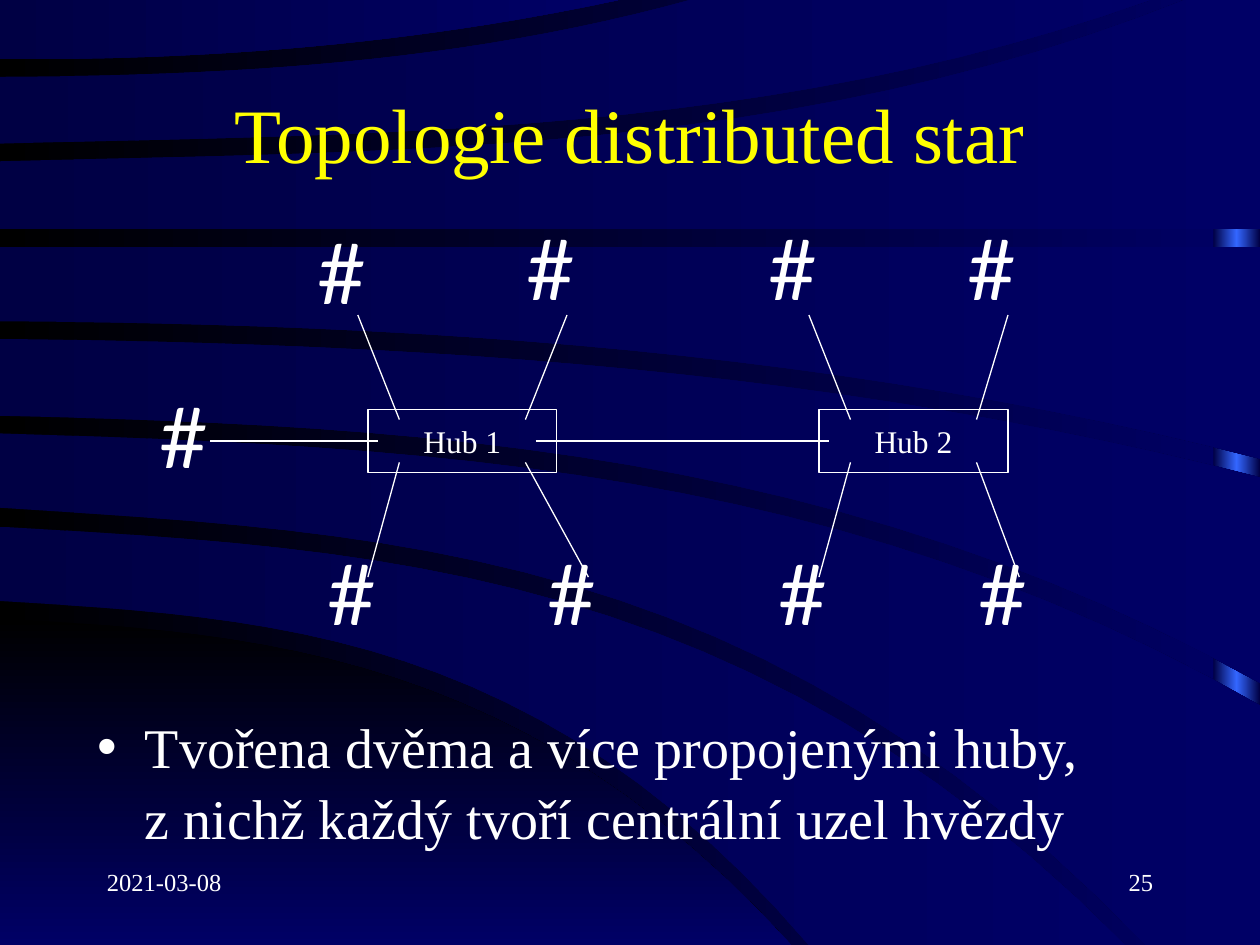
from copy import deepcopy
from math import prod

from lxml import etree
from pptx import Presentation
from pptx import util as u
from pptx.dml.color import RGBColor
from pptx.enum import shapes, text
from pptx.oxml import ns

COLOURS = {"white": "FFFFFF", "title": "FFFF00", "black": "000000",
           "night": "000044", "navy": "000066", "glow": "3366FF"}
SERIF, SANS = "Times New Roman", "Lato"
SLIDE_WIDTH, SLIDE_HEIGHT = 10, 7.5

# An edge is its right end and its heights at equal steps from the left side, in inches.
WEDGE = (6.28, [4.91, 5.12, 5.83, 7.5])
# Upper edge, lower edge and the corners of the slide between their right ends.
BANDS = [
    ((8.93, [4.18, 4.45, 5.34, 7.5]), (6.42, [4.77, 4.98, 5.71, 7.5]), []),
    ((10, [3.44, 3.62, 4.21, 5.6]), (9.09, [4.03, 4.31, 5.23, 7.5]),
     [(SLIDE_WIDTH, SLIDE_HEIGHT)]),
    ((10, [2.69, 2.8, 3.13, 3.79]), (10, [3.3, 3.47, 4.06, 5.42]), []),
    ((10, [1.96, 1.96]), (10, [2.55, 2.65, 2.98, 3.64]), []),
    ((9.4, [1.28, 1.19, 0.87, 0]), (10, [1.82, 1.82]), [(SLIDE_WIDTH, 0)]),
    ((5.48, [0.61, 0.56, 0.38, 0]), (9.13, [1.14, 1.05, 0.76, 0]), []),
    ((4.91, [0, 0]), (4.91, [0.47, 0.43, 0.28, 0]), []),
]
EDGE_STEPS = 24

# Each hub: label, left edge, and the left and top of its computers.
HUBS = [
    ("Hub 1", 2.92, [(2.42, 1.7), (4.08, 1.67), (2.5, 4.25), (4.25, 4.25)]),
    ("Hub 2", 6.5, [(6, 1.67), (7.58, 1.67), (6.08, 4.25), (7.67, 4.25)]),
]
HUB_TOP, HUB_WIDTH, HUB_HEIGHT = 3.25, 1.5, 0.5
CABLE_Y = HUB_TOP + HUB_HEIGHT / 2
CABLE_SHIFT = 0.42
# Cable start from the hub's left edge, and the heights of both cable ends.
PORTS = [(x, *ends) for ends in [(3.33, 2.5), (3.67, 4.58)] for x in (0.25, 1.25)]


def inch(value):
    return u.Cm(value * 2.54)


def rgb(name):
    return RGBColor.from_string(COLOURS[name])


def place(shape, left, top, width, height):
    shape.left, shape.top = inch(left), inch(top)
    shape.width, shape.height = inch(width), inch(height)


def set_gradient(fill, names, angle=0):
    """Spread the named colours evenly; the angle runs counter-clockwise."""
    fill.gradient()
    fill.gradient_angle = angle
    stop_list = fill.gradient_stops[0]._gs.getparent()
    while len(stop_list) < len(names):
        stop_list.append(deepcopy(stop_list[0]))
    for i, (stop, name) in enumerate(zip(fill.gradient_stops, names)):
        stop.color.rgb = rgb(name)
        stop.position = i / (len(names) - 1)


def style(paragraph, size, font=SERIF, colour="white", align=text.PP_ALIGN.LEFT):
    paragraph.alignment = align
    paragraph.font.size = u.Pt(size)
    paragraph.font.name = font
    paragraph.font.color.rgb = rgb(colour)


def trace(edge):
    """Sample the polynomial that passes through the heights of an edge."""
    right, heights = edge
    last = len(heights) - 1
    points = []
    for step in range(EDGE_STEPS + 1):
        t = step / EDGE_STEPS
        y = sum(height * prod((t * last - j) / (i - j) for j in range(last + 1) if j != i)
                for i, height in enumerate(heights))
        points.append((t * right, y))
    return points


def add_arc(slide, outline, names, angle=0):
    points = [(inch(x), inch(y)) for x, y in outline]
    builder = slide.shapes.build_freeform(*points[0])
    builder.add_line_segments(points[1:], close=True)
    arc = builder.convert_to_shape()
    arc.shadow.inherit = False
    arc.line.fill.background()
    set_gradient(arc.fill, names, angle)


def add_background(slide):
    set_gradient(slide.background.fill, ["black", "navy"])
    strip = slide.shapes.add_shape(shapes.MSO_SHAPE.RECTANGLE, 0, 0, 0, 0)
    place(strip, 9.63, 0, 0.37, SLIDE_HEIGHT)
    strip.shadow.inherit = False
    strip.line.fill.background()
    set_gradient(strip.fill, ["night", "glow", "night"])
    add_arc(slide, trace(WEDGE) + [(0, SLIDE_HEIGHT)], ["black", "navy"], 270)
    for upper, lower, corners in BANDS:
        add_arc(slide, trace(upper) + corners + trace(lower)[::-1], ["night", "navy"])


def add_label(slide, words, box, size, wrap=True, **looks):
    label = slide.shapes.add_textbox(0, 0, 0, 0)
    place(label, *box)
    label.text_frame.word_wrap = wrap
    label.text_frame.text = words
    style(label.text_frame.paragraphs[0], size, **looks)


def add_computer(slide, left, top):
    add_label(slide, "#", (left, top, 0.87, 0.9), 48, wrap=False, font=SANS)


def add_hub(slide, name, left):
    hub = slide.shapes.add_shape(shapes.MSO_SHAPE.RECTANGLE, 0, 0, 0, 0)
    place(hub, left, HUB_TOP, HUB_WIDTH, HUB_HEIGHT)
    hub.shadow.inherit = False
    hub.fill.background()
    hub.line.color.rgb = rgb("white")
    hub.line.width = u.Pt(0.75)
    hub.text_frame.word_wrap = False
    hub.text_frame.vertical_anchor = text.MSO_ANCHOR.MIDDLE
    hub.text_frame.text = name
    style(hub.text_frame.paragraphs[0], 18, align=text.PP_ALIGN.CENTER)


def add_cable(slide, *ends):
    cable = slide.shapes.add_connector(shapes.MSO_CONNECTOR.STRAIGHT, *map(inch, ends))
    cable.line.color.rgb = rgb("white")
    cable.line.width = u.Pt(0.75)
    etree.SubElement(cable._element.spPr, ns.qn("a:effectLst"))


def fill_title(title):
    place(title, 0.75, 0.47, 8.5, 1.16)
    frame = title.text_frame
    frame.text = "Topologie distributed star"
    frame.auto_size = text.MSO_AUTO_SIZE.NONE
    frame.vertical_anchor = text.MSO_ANCHOR.MIDDLE
    style(frame.paragraphs[0], 44, colour="title", align=text.PP_ALIGN.CENTER)


def fill_body(body):
    place(body, 0.67, 5.58, 8.5, 1.13)
    body.text_frame.auto_size = text.MSO_AUTO_SIZE.NONE
    point = body.text_frame.paragraphs[0]
    point.add_run().text = "Tvořena dvěma a více propojenými huby,"
    point.add_line_break()
    point.add_run().text = "z nichž každý tvoří centrální uzel hvězdy"
    style(point, 32)
    point.space_before = u.Pt(6.4)
    point.line_spacing = 1.05
    properties = point._p.get_or_add_pPr()
    properties.set("marL", str(inch(0.38)))
    properties.set("indent", str(-inch(0.38)))
    etree.SubElement(properties, ns.qn("a:buChar")).set("char", "•")
    # The bullet has to come before the default run properties.
    properties.append(properties.find(ns.qn("a:defRPr")))


def main():
    deck = Presentation()
    deck.slide_width, deck.slide_height = inch(SLIDE_WIDTH), inch(SLIDE_HEIGHT)
    slide = deck.slides.add_slide(deck.slide_layouts[1])
    title, body = slide.placeholders
    add_background(slide)
    for holder in (title, body):
        slide.shapes._spTree.append(holder._element)
    fill_title(title)
    fill_body(body)
    add_label(slide, "2021-03-08", (0.75, 6.83, 2.08, 0.5), 14)
    add_label(slide, "25", (7.17, 6.83, 2.08, 0.5), 14, align=text.PP_ALIGN.RIGHT)

    add_computer(slide, 1.17, 3)
    for name, left, computers in HUBS:
        add_hub(slide, name, left)
        for (x, y), (port, port_y, cable_y) in zip(computers, PORTS):
            add_computer(slide, x, y)
            add_cable(slide, left + port, port_y, x + CABLE_SHIFT, cable_y)
    add_cable(slide, 4.25, CABLE_Y, 6.58, CABLE_Y)
    add_cable(slide, 1.67, CABLE_Y, 3, CABLE_Y)
    deck.save("out.pptx")


if __name__ == "__main__":
    main()
